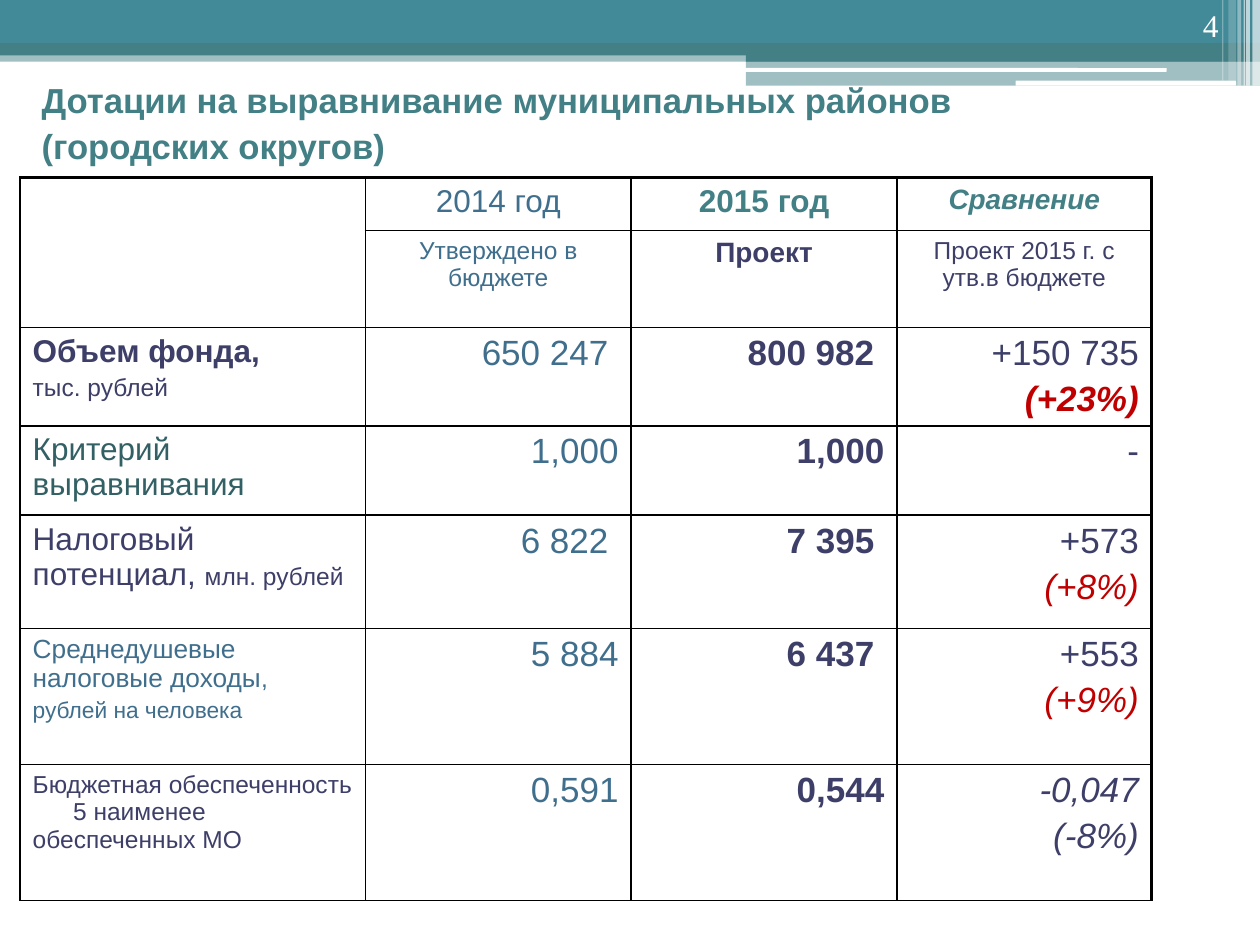
"""Build the slide on equalisation grants for municipal districts."""
from lxml.etree import SubElement
from pptx import Presentation
from pptx.dml.color import RGBColor
from pptx.enum.shapes import MSO_SHAPE as Shape
from pptx.enum.text import MSO_ANCHOR as Anchor, MSO_AUTO_SIZE as AutoSize, PP_ALIGN as Align
from pptx.oxml.ns import qn
from pptx.util import Inches, Pt

COLORS = {"teal": "438086", "band": "428A98", "white": "FFFFFF", "black": "000000",
          "blue": "406F8D", "violet": "3E3F68", "green": "326065", "red": "C00000"}
TITLE = "Дотации на выравнивание муниципальных районов\v(городских округов)"
PAGE_NUMBER = "4"
BANDS = [
    (0, 0.4, 10, 0.09, "teal", 50), (0, 0, 10, 0.34, "band", 100),
    (0, 0.34, 10, 0.1, "teal", 100), (5.92, 0.39, 4.08, 0.1, "teal", 100),
    (5.92, 0.48, 4.08, 0.2, "teal", 50),
]
PILLS = [(5.91, 0.54, 3.35, 0.03, "white", 100), (8.06, 0.64, 1.75, 0.04, "white", 100)]
STRIPES = [(9.94, 0.06, 0.68, 65), (9.89, 0.03, 0.68, 65), (9.87, 0.01, 0.68, 60),
           (9.82, 0.03, 0.68, 40), (9.75, 0.06, 0.64, 20), (9.7, 0.01, 0.64, 30)]

COLUMNS = [2.74, 2.11, 2.11, 2.02]
ROWS = [0.42, 0.77, 0.78, 0.71, 0.9, 1.08, 1.08]
HEADERS = [
    [("2014 год", 18, "blue", ""), ("2015 год", 18, "teal", "b"), ("Сравнение", 16, "teal", "bi")],
    [("Утверждено в бюджете", 14, "blue", ""), ("Проект", 16, "violet", "b"),
     ("Проект 2015 г. с утв.в бюджете", 14, "violet", "")],
]
LABELS = [
    [[("Объем фонда,", 18, "violet", "b")], [("тыс. рублей", 14, "violet", "")]],
    [[("Критерий выравнивания", 18, "green", "")]],
    [[("Налоговый потенциал, ", 18, "violet", ""), ("млн. рублей", 14, "violet", "")]],
    [[("Среднедушевые налоговые доходы", 15, "blue", ""), (",", 14, "blue", "")],
     [("рублей на человека", 13, "blue", "")]],
    [[("Бюджетная обеспеченность", 14, "violet", "")],
     [("5 наименее обеспеченных МО", 14, "violet", "")]],
]
VALUES = [
    ("650 247", "800 982", [("+150 735", "violet", ""), ("(+23%)", "red", "bi")]),
    ("1,000", "1,000", [("-", "violet", "")]),
    ("6 822", "7 395", [("+573", "violet", ""), ("(+8%)", "red", "i")]),
    ("5 884", "6 437", [("+553", "violet", ""), ("(+9%)", "red", "i")]),
    ("0,591", "0,544", [("-0,047", "violet", "i"), ("(-8%)", "violet", "i")]),
]
INSET_CELLS = {(2, 1), (2, 2), (4, 1), (4, 2), (5, 2)}
INDENTED_ROW = 6


def color(name):
    return RGBColor.from_string(COLORS[name])


def style(span, size, shade, flags="", face="Arial"):
    span.font.name, span.font.size = face, Pt(size)
    span.font.bold, span.font.italic = "b" in flags, "i" in flags
    span.font.color.rgb = color(shade)


def add_bar(page, left, top, width, height, shade, opacity, kind=Shape.RECTANGLE):
    bar = page.shapes.add_shape(kind, *map(Inches, (left, top, width, height)))
    bar.shadow.inherit = False
    bar.line.fill.background()
    bar.fill.solid()
    bar.fill.fore_color.rgb = color(shade)
    if opacity < 100:
        tint = bar.fill._xPr.find(qn("a:solidFill"))[0]
        SubElement(tint, qn("a:alpha"), val=str(opacity * 1000))


def add_borders(cell, row, column):
    widths = {"L": 1, "R": 2.25 if column == len(COLUMNS) - 1 else 1,
              "T": 2.25 if row == 0 else 1, "B": 1}
    properties = cell._tc.get_or_add_tcPr()
    for side, width in widths.items():
        line = SubElement(properties, qn(f"a:ln{side}"), w=str(Pt(width)))
        fill = SubElement(line, qn("a:solidFill"))
        SubElement(fill, qn("a:srgbClr"), val=COLORS["black"])


def fill_cell(cell, paragraphs, align, gap=0.2):
    frame = cell.text_frame
    for index, spans in enumerate(paragraphs):
        para = frame.add_paragraph() if index else frame.paragraphs[0]
        para.alignment = align
        if index:
            para.space_before = Pt(spans[0][1] * gap)
        for text, *look in spans:
            span = para.add_run()
            span.text = text
            style(span, *look)


def add_table(page):
    frame = page.shapes.add_table(len(ROWS), len(COLUMNS), Inches(0.16), Inches(1.41),
                                  Inches(sum(COLUMNS)), Inches(sum(ROWS)))
    table = frame.table
    table.first_row = table.horz_banding = False
    for column, width in zip(table.columns, COLUMNS):
        column.width = Inches(width)
    for row, height in zip(table.rows, ROWS):
        row.height = Inches(height)
    for row in range(len(ROWS)):
        for column in range(len(COLUMNS)):
            cell = table.cell(row, column)
            add_borders(cell, row, column)
            cell.fill.background()
            cell.margin_right = Inches(0.18 if (row, column) in INSET_CELLS else 0.1)
    table.cell(0, 0).merge(table.cell(1, 0))

    for row, headers in enumerate(HEADERS):
        for column, header in enumerate(headers, 1):
            fill_cell(table.cell(row, column), [[header]], Align.CENTER)
    for row, (label, (approved, project, change)) in enumerate(zip(LABELS, VALUES), len(HEADERS)):
        fill_cell(table.cell(row, 0), label, Align.LEFT, 0 if row == INDENTED_ROW else 0.2)
        fill_cell(table.cell(row, 1), [[(approved, 20, "blue", "")]], Align.RIGHT)
        fill_cell(table.cell(row, 2), [[(project, 20, "violet", "b")]], Align.RIGHT)
        fill_cell(table.cell(row, 3), [[(text, 20, shade, flags)] for text, shade, flags in change],
                  Align.RIGHT)
    indented = table.cell(INDENTED_ROW, 0).text_frame.paragraphs[1]
    indented._p.get_or_add_pPr().set("indent", str(Inches(0.32)))


def add_title(page):
    title = page.shapes.title
    title.element.getparent().append(title.element)
    title.left, title.top, title.width, title.height = map(Inches, (0.23, 0.62, 9.77, 0.67))
    frame = title.text_frame
    frame.text = TITLE
    frame.auto_size = AutoSize.NONE
    frame.vertical_anchor = Anchor.MIDDLE
    para = frame.paragraphs[0]
    para.alignment = Align.LEFT
    para.line_spacing = 1.1
    for span in para.runs:
        style(span, 19.8, "teal", "b")


def add_page_number(page):
    box = page.shapes.add_textbox(*map(Inches, (8.94, 0, 0.83, 0.4)))
    frame = box.text_frame
    frame.word_wrap = True
    frame.vertical_anchor = Anchor.BOTTOM
    frame.text = PAGE_NUMBER
    para = frame.paragraphs[0]
    para.alignment = Align.RIGHT
    style(para.runs[0], 18, "white", face="Times New Roman")


def main():
    deck = Presentation()
    deck.slide_width, deck.slide_height = Inches(10), Inches(7.5)
    page = deck.slides.add_slide(deck.slide_layouts[5])
    for band in BANDS:
        add_bar(page, *band)
    for pill in PILLS:
        add_bar(page, *pill, kind=Shape.ROUNDED_RECTANGLE)
    for left, width, height, opacity in STRIPES:
        add_bar(page, left, 0, width, height, "white", opacity)
    add_title(page)
    add_table(page)
    add_page_number(page)
    deck.save("out.pptx")


if __name__ == "__main__":
    main()
